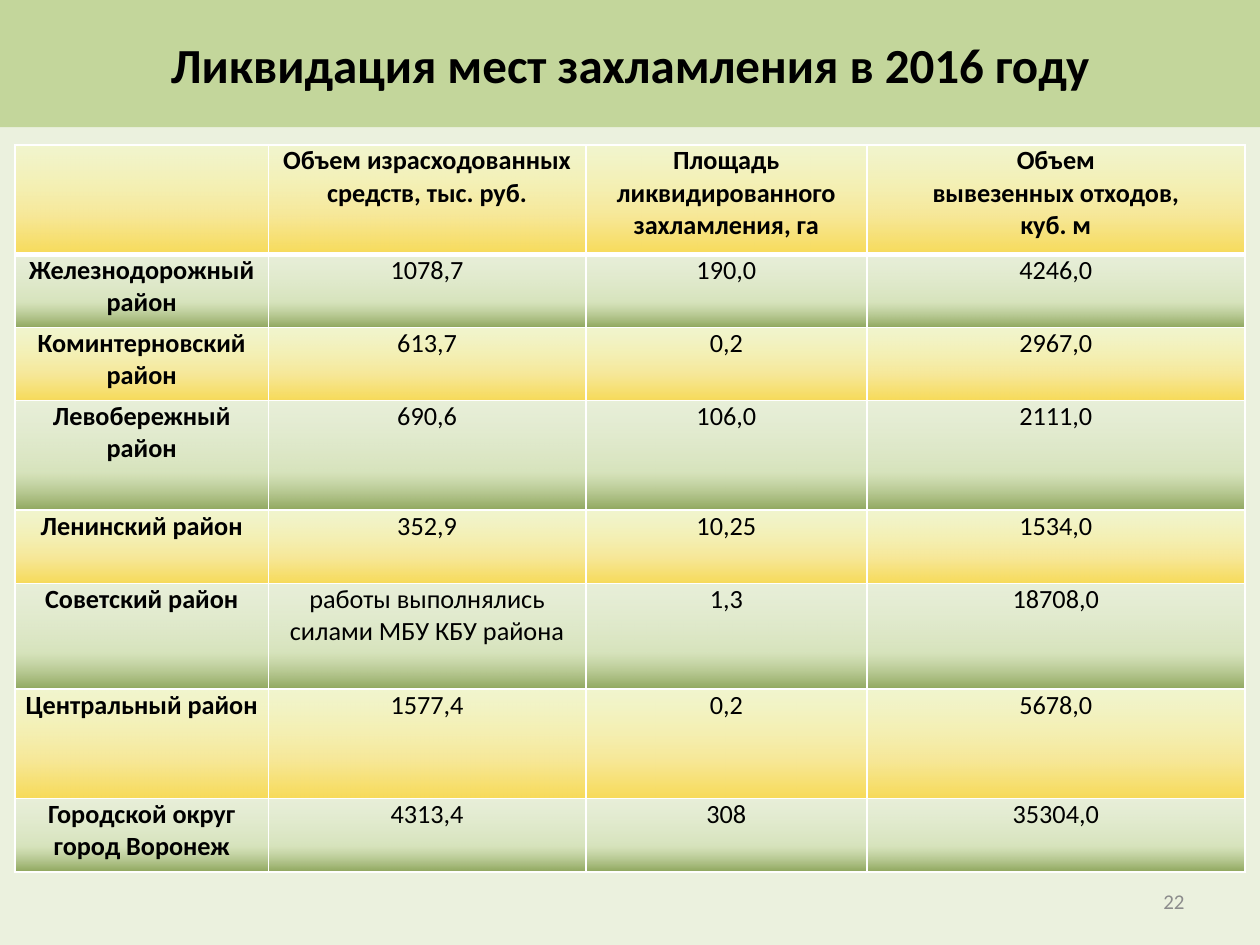
from pptx import Presentation
from pptx.dml.color import RGBColor
from pptx.enum.text import MSO_ANCHOR, MSO_AUTO_SIZE, PP_ALIGN
from pptx.oxml import parse_xml
from pptx.oxml.ns import nsdecls
from pptx.util import Pt

BACKGROUND = RGBColor(0xEB, 0xF1, 0xDE)
BAND = RGBColor(0xC3, 0xD6, 0x9B)
BLACK = RGBColor(0, 0, 0)
WHITE = RGBColor(0xFF, 0xFF, 0xFF)
GREY = RGBColor(0x8C, 0x8C, 0x8C)
YELLOW_STOPS = [
    (0, RGBColor(0xFF, 0xCC, 0x00), 60),
    (35, RGBColor(0xFF, 0xE2, 0x69), 60),
    (100, RGBColor(0xFF, 0xFF, 0xAB), 30),
]
GREEN_STOPS = [
    (0, RGBColor(0x77, 0x93, 0x3C), 80),
    (35, BAND, 50),
    (100, RGBColor(0xD7, 0xE4, 0xBD), 15),
]
FONT = "Calibri"

COLUMN_WIDTHS = [144.72, 181.44, 160.56, 216]
ROW_HEIGHTS = [62.6, 41.8, 41.8, 62.6, 41.8, 60.5, 62.6, 41.8]
ROWS = [
    ["", "Объем израсходованных средств, тыс. руб.",
     "Площадь ликвидированного захламления, га",
     "Объем\nвывезенных отходов,\nкуб. м"],
    ["Железнодорожный район", "1078,7", "190,0", "4246,0"],
    ["Коминтерновский район", "613,7", "0,2", "2967,0"],
    ["Левобережный район", "690,6", "106,0", "2111,0"],
    ["Ленинский район", "352,9", "10,25", "1534,0"],
    ["Советский район", "работы выполнялись силами МБУ КБУ района", "1,3", "18708,0"],
    ["Центральный район", "1577,4", "0,2", "5678,0"],
    ["Городской округ город Воронеж", "4313,4", "308", "35304,0"],
]


def format_text(frame, size, color, bold, alignment):
    for paragraph in frame.paragraphs:
        paragraph.alignment = alignment
        for span in paragraph.runs:
            span.font.name = FONT
            span.font.size = Pt(size)
            span.font.bold = bold
            span.font.color.rgb = color


def add_border(cell, side, width):
    cell._tc.get_or_add_tcPr().append(parse_xml(
        f'<a:{side} {nsdecls("a")} w="{Pt(width)}"><a:solidFill>'
        f'<a:srgbClr val="{WHITE}"/></a:solidFill></a:{side}>'))


def add_gradient(cell, stops):
    stop_xml = "".join(
        f'<a:gs pos="{position * 1000}"><a:srgbClr val="{color}">'
        f'<a:alpha val="{opacity * 1000}"/></a:srgbClr></a:gs>'
        for position, color, opacity in stops)
    cell._tc.get_or_add_tcPr().append(parse_xml(
        f'<a:gradFill {nsdecls("a")} rotWithShape="1"><a:gsLst>{stop_xml}</a:gsLst>'
        '<a:lin ang="16200000" scaled="1"/></a:gradFill>'))


def place_title(page, left, top, width, height):
    title = page.shapes.title
    title.left, title.top, title.width, title.height = map(Pt, (left, top, width, height))
    title.fill.solid()
    title.fill.fore_color.rgb = BAND
    frame = title.text_frame
    frame.text = "Ликвидация мест захламления в 2016 году"
    frame.auto_size = MSO_AUTO_SIZE.NONE
    frame.vertical_anchor = MSO_ANCHOR.MIDDLE
    format_text(frame, 28, BLACK, True, PP_ALIGN.CENTER)


def place_table(page, left, top, width, height):
    table = page.shapes.add_table(
        len(ROWS), len(COLUMN_WIDTHS), Pt(left), Pt(top), Pt(width), Pt(height)).table
    table.horz_banding = False
    for column, column_width in zip(table.columns, COLUMN_WIDTHS):
        column.width = Pt(column_width)
    for row_index, (row, row_height) in enumerate(zip(table.rows, ROW_HEIGHTS)):
        row.height = Pt(row_height)
        for column_index, cell in enumerate(row.cells):
            cell.margin_left = cell.margin_right = Pt(5)
            cell.margin_top = cell.margin_bottom = Pt(0)
            cell.text_frame.text = ROWS[row_index][column_index]
            bold = row_index == 0 or column_index == 0
            format_text(cell.text_frame, 15, BLACK, bold, PP_ALIGN.CENTER)
            add_border(cell, "lnL", 1)
            add_border(cell, "lnR", 1)
            add_border(cell, "lnT", 3 if row_index == 1 else 1)
            add_border(cell, "lnB", 3 if row_index == 0 else 1)
            add_gradient(cell, GREEN_STOPS if row_index % 2 else YELLOW_STOPS)


def place_page_number(page, left, top, width, height):
    box = page.shapes.add_textbox(Pt(left), Pt(top), Pt(width), Pt(height))
    frame = box.text_frame
    frame.word_wrap = True
    frame.vertical_anchor = MSO_ANCHOR.MIDDLE
    frame.text = "22"
    format_text(frame, 12, GREY, False, PP_ALIGN.RIGHT)


def main():
    deck = Presentation()
    deck.slide_width, deck.slide_height = Pt(720), Pt(540)
    page = deck.slides.add_slide(deck.slide_layouts[5])
    page.background.fill.solid()
    page.background.fill.fore_color.rgb = BACKGROUND
    place_title(page, 0, 0, 720, 72.7)
    place_table(page, 8.64, 82.8, sum(COLUMN_WIDTHS), sum(ROW_HEIGHTS))
    place_page_number(page, 516.2, 500.4, 167.8, 28.8)
    deck.save("out.pptx")


if __name__ == "__main__":
    main()
